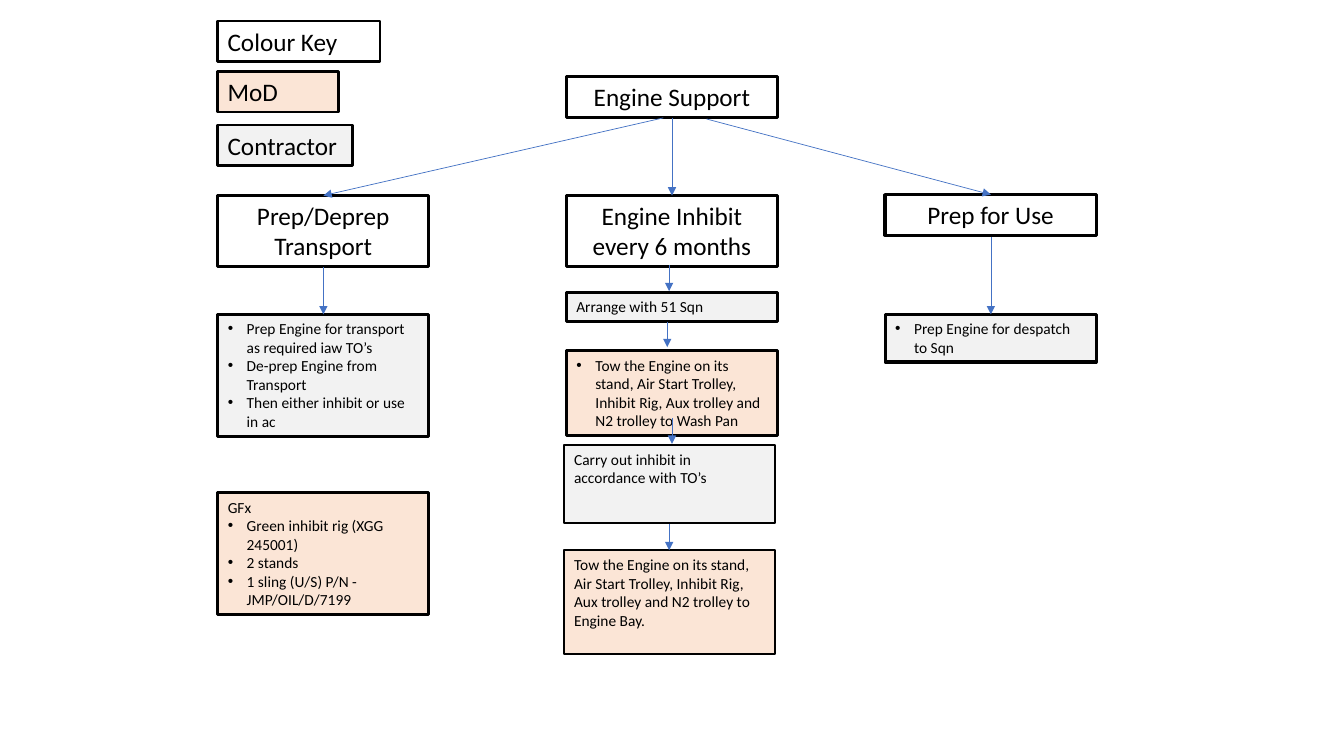
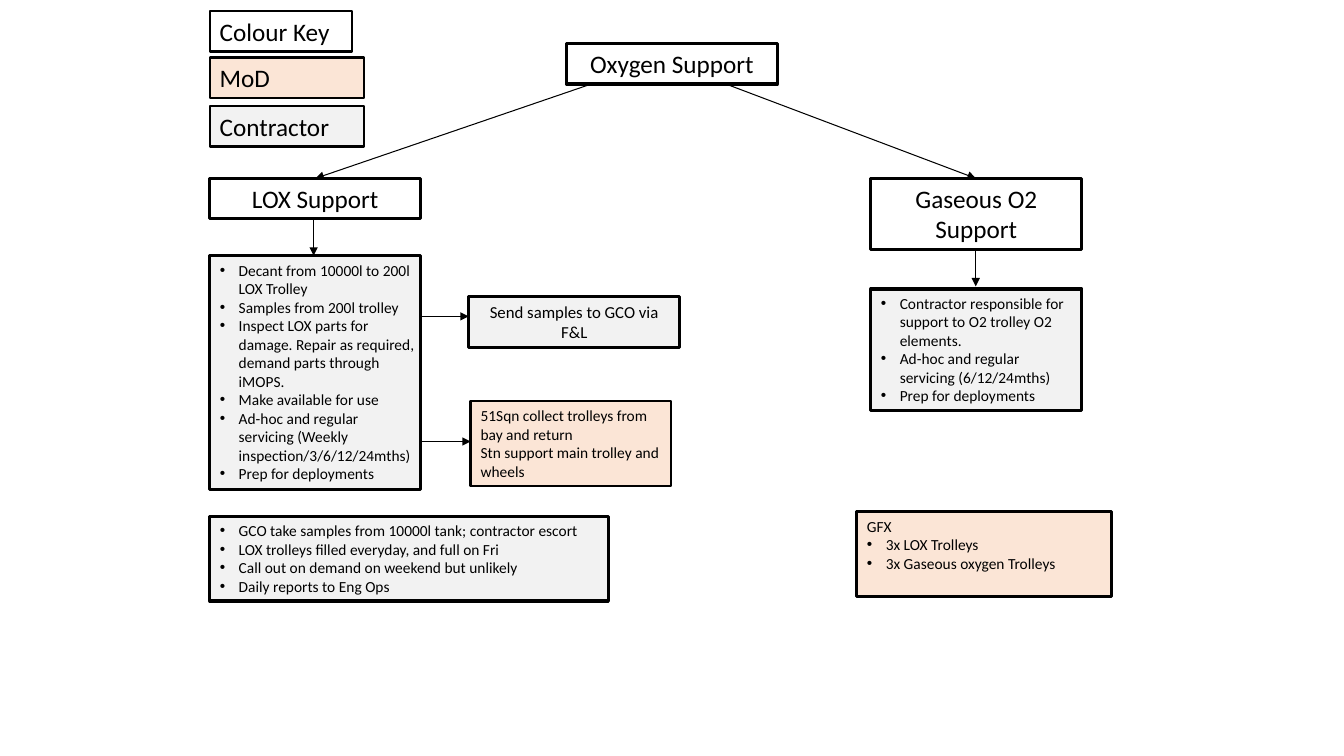
"""Build two support flow charts: engine and oxygen."""

from dataclasses import dataclass
from typing import NamedTuple, Optional

from lxml.etree import SubElement
from pptx import Presentation
from pptx.dml.color import RGBColor
from pptx.enum.shapes import MSO_CONNECTOR
from pptx.enum.text import MSO_ANCHOR, MSO_AUTO_SIZE, PP_ALIGN
from pptx.oxml.ns import qn
from pptx.util import Pt

FONT = "Calibri"
BLACK = "000000"
BLUE = "4472C4"
MOD = "FBE5D6"
CONTRACTOR = "F2F2F2"
COLUMN = 150.8
KEY_HEIGHT = 29
INDENT = 13.5
THICK = 2.25
THIN = 1.75


@dataclass(frozen=True)
class Box:
    """An outlined text box; a holder number puts it in a placeholder."""

    left: float
    top: float
    height: float
    lines: tuple[str, ...]
    width: float = COLUMN
    fill: Optional[str] = None
    weight: float = THICK
    size: float = 11
    centred: bool = False
    holder: Optional[int] = None
    plain_lines: int = 0
    right_inset: float = 7.2


class Arrow(NamedTuple):
    """A straight arrow between two points."""

    start_x: float
    start_y: float
    end_x: float
    end_y: float


@dataclass(frozen=True)
class Chart:
    """The content of one page."""

    boxes: tuple[Box, ...]
    arrows: tuple[Arrow, ...]
    arrow_colour: str
    arrow_weight: float


def colour(value: str) -> RGBColor:
    """Turn a hex string into a colour."""
    return RGBColor.from_string(value)


def heading(left: float, top: float, text: str, height: float = KEY_HEIGHT,
            holder: Optional[int] = None) -> Box:
    """Describe a large centred heading box."""
    return Box(left, top, height, (text,), size=18, centred=True, holder=holder)


def colour_key(left: float, tops: tuple[float, ...],
               widths: tuple[float, ...]) -> tuple[Box, ...]:
    """Describe the three boxes of the colour key."""
    entries = (("Colour Key", None), ("MoD", MOD), ("Contractor", CONTRACTOR))
    return tuple(
        Box(left, top, KEY_HEIGHT, (text,), width, fill, THIN, 18)
        for top, width, (text, fill) in zip(tops, widths, entries)
    )


def set_bullet(para, bulleted: bool) -> None:
    """Give a paragraph a hanging bullet, or remove the inherited one."""
    properties = para._p.get_or_add_pPr()
    indent = Pt(INDENT) if bulleted else 0
    properties.set("marL", str(indent))
    properties.set("indent", str(-indent))
    if bulleted:
        SubElement(properties, qn("a:buFont"), typeface="Arial")
        SubElement(properties, qn("a:buChar"), char="•")
    else:
        SubElement(properties, qn("a:buNone"))


def write_text(frame, lines: tuple[str, ...], *, size: float, centred: bool,
               bulleted: bool, plain_lines: int, right_inset: float) -> None:
    """Fill a text frame with one paragraph for each line."""
    frame.word_wrap = True
    frame.auto_size = MSO_AUTO_SIZE.NONE
    frame.vertical_anchor = MSO_ANCHOR.TOP
    frame.margin_right = Pt(right_inset)
    for number, line in enumerate(lines):
        para = frame.paragraphs[0] if number == 0 else frame.add_paragraph()
        para.alignment = PP_ALIGN.CENTER if centred else PP_ALIGN.LEFT
        para.space_before = Pt(0)
        set_bullet(para, bulleted and number >= plain_lines)
        span = para.add_run()
        span.text = line
        span.font.name = FONT
        span.font.size = Pt(size)
        span.font.bold = False
        span.font.color.rgb = colour(BLACK)


def draw_box(page, box: Box) -> None:
    """Draw a box as a placeholder or as a text box."""
    area = (Pt(box.left), Pt(box.top), Pt(box.width), Pt(box.height))
    if box.holder is None:
        shape = page.shapes.add_textbox(*area)
    else:
        shape = page.placeholders[box.holder]
        shape.left, shape.top, shape.width, shape.height = area
    if box.fill:
        shape.fill.solid()
        shape.fill.fore_color.rgb = colour(box.fill)
    else:
        shape.fill.background()
    shape.line.color.rgb = colour(BLACK)
    shape.line.width = Pt(box.weight)
    write_text(shape.text_frame, box.lines, size=box.size, centred=box.centred,
               bulleted=bool(box.holder), plain_lines=box.plain_lines,
               right_inset=box.right_inset)


def draw_arrow(page, arrow: Arrow, line_colour: str, weight: float) -> None:
    """Draw a connector with a triangle at its end."""
    connector = page.shapes.add_connector(
        MSO_CONNECTOR.STRAIGHT, *(Pt(value) for value in arrow))
    connector.line.color.rgb = colour(line_colour)
    connector.line.width = Pt(weight)
    properties = connector.element.find(qn("p:spPr"))
    SubElement(properties.find(qn("a:ln")), qn("a:tailEnd"), type="triangle")
    SubElement(properties, qn("a:effectLst"))


ENGINE = Chart(
    boxes=(
        heading(404.6, 54.7, "Engine Support", holder=0),
        heading(155.5, 139.7, "Prep/Deprep Transport", 51),
        heading(404.6, 139.7, "Engine Inhibit every 6 months", 51),
        heading(632.2, 139, "Prep for Use"),
        Box(155.5, 224.6, 87, (
            "Prep Engine for transport as required iaw TO’s",
            "De-prep Engine from Transport",
            "Then either inhibit or use in ac",
        ), fill=CONTRACTOR, holder=1),
        Box(155.5, 352, 87, (
            "GFx",
            "Green inhibit rig (XGG 245001)",
            "2 stands",
            "1 sling (U/S) P/N - JMP/OIL/D/7199",
        ), fill=MOD, holder=2, plain_lines=1),
        Box(404.6, 250.4, 60.5, (
            "Tow the Engine on its stand, Air Start Trolley, Inhibit Rig, "
            "Aux trolley and N2 trolley to Wash Pan",
        ), fill=MOD, holder=3),
        Box(632.2, 224.6, 34, ("Prep Engine for despatch to Sqn",),
            fill=CONTRACTOR, holder=4),
        Box(404.6, 209, 20.6, ("Arrange with 51 Sqn",),
            fill=CONTRACTOR, weight=THIN),
        Box(403, 318, 55.5, ("Carry out inhibit in accordance with TO’s",),
            fill=CONTRACTOR, weight=THIN),
        Box(403, 393, 74, (
            "Tow the Engine on its stand, Air Start Trolley, Inhibit Rig, "
            "Aux trolley and N2 trolley to Engine Bay.",
        ), fill=MOD, weight=THIN),
        *colour_key(155.5, (15.1, 51.1, 89.3), (116, 86.4, 96.5)),
    ),
    arrows=(
        Arrow(480, 84.2, 480, 139.7),
        Arrow(473.8, 84.2, 231, 139.7),
        Arrow(504.7, 85, 707.8, 139),
        Arrow(231, 190.8, 231, 224.6),
        Arrow(707.8, 169.2, 707.8, 224.6),
        Arrow(478, 189.4, 478, 208),
        Arrow(476.6, 229.7, 476.6, 248),
        Arrow(480, 298.8, 480, 317),
        Arrow(478, 374.4, 478, 393),
    ),
    arrow_colour=BLUE,
    arrow_weight=0.5,
)

OXYGEN = Chart(
    boxes=(
        heading(404.6, 31, "Oxygen Support", holder=0),
        heading(149.8, 127.4, "LOX Support"),
        heading(622, 127.4, "Gaseous O2 Support", 51),
        Box(149.8, 182.6, 167, (
            "Decant from 10000l to 200l LOX Trolley",
            "Samples from 200l trolley",
            "Inspect LOX parts for damage. Repair as required, demand parts "
            "through iMOPS.",
            "Make available for use",
            "Ad-hoc and regular servicing (Weekly inspection/3/6/12/24mths)",
            "Prep for deployments",
        ), fill=CONTRACTOR, holder=1, right_inset=4),
        Box(149.8, 368.8, 60.5, (
            "GCO take samples from 10000l tank; contractor escort",
            "LOX trolleys filled everyday, and full on Fri",
            "Call out on demand on weekend but unlikely",
            "Daily reports to Eng Ops",
        ), 284.8, CONTRACTOR, holder=2),
        Box(622, 206.4, 87, (
            "Contractor responsible for support to O2 trolley O2 elements.",
            "Ad-hoc and regular servicing (6/12/24mths)",
            "Prep for deployments",
        ), fill=CONTRACTOR, holder=3),
        Box(612, 365.4, 60.5, (
            "GFX", "3x LOX Trolleys", "3x Gaseous oxygen Trolleys",
        ), 182, MOD, holder=4, plain_lines=1),
        Box(334.8, 211.7, 36.4, ("Send samples to GCO via F&L",),
            fill=CONTRACTOR, size=12, centred=True),
        Box(336.2, 286.6, 60.5, (
            "51Sqn collect trolleys from bay and return",
            "Stn support main trolley and wheels",
        ), 143.3, MOD, THIN),
        *colour_key(149.8, (7.9, 41, 75.6), (101.5, 110.4, 110.4)),
    ),
    arrows=(
        Arrow(421, 60.5, 225.4, 127.4),
        Arrow(519.8, 60.5, 697, 127.4),
        Arrow(224, 156.4, 224, 182.6),
        Arrow(697, 178.6, 697, 204.5),
        Arrow(300.3, 226, 334.8, 226),
        Arrow(301.7, 315.4, 336.2, 315.4),
    ),
    arrow_colour=BLACK,
    arrow_weight=0.75,
)


def main() -> None:
    """Build and save the deck."""
    deck = Presentation()
    deck.slide_width, deck.slide_height = Pt(960), Pt(540)
    comparison = deck.slide_layouts[4]
    for chart in (ENGINE, OXYGEN):
        page = deck.slides.add_slide(comparison)
        for box in chart.boxes:
            draw_box(page, box)
        for arrow in chart.arrows:
            draw_arrow(page, arrow, chart.arrow_colour, chart.arrow_weight)
    deck.save("out.pptx")


if __name__ == "__main__":
    main()
